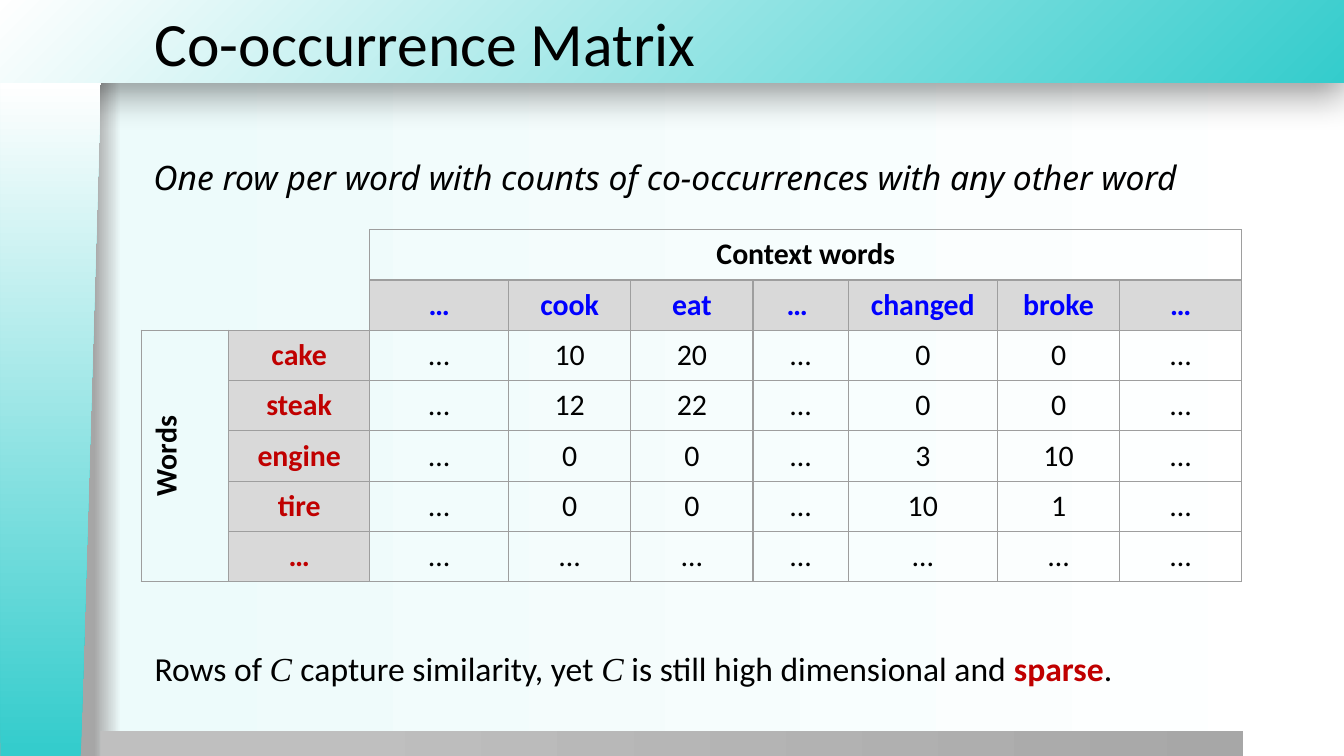
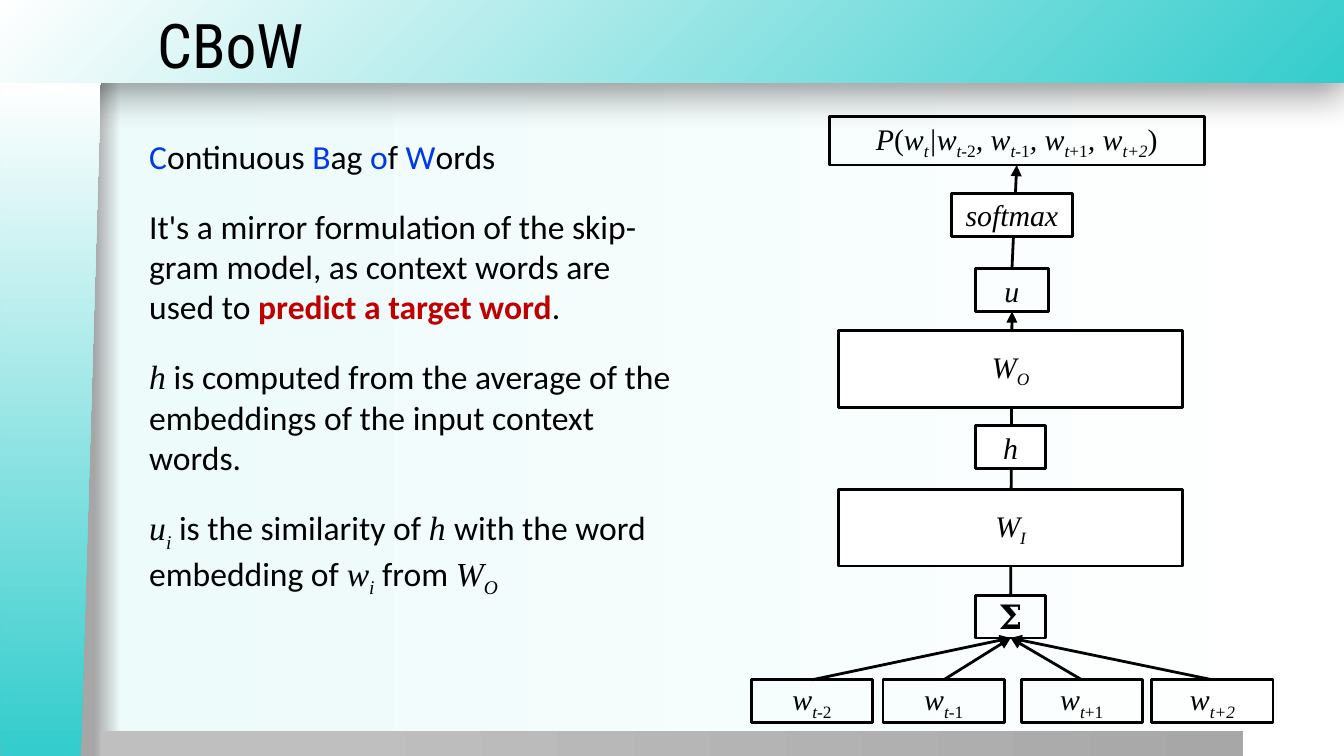
from dataclasses import dataclass, replace

from lxml import etree
from pptx import Presentation
from pptx import util as u
from pptx.dml import color
from pptx.enum import shapes, text
from pptx.oxml import ns


@dataclass(frozen=True)
class Style:
    face: str = "Calibri"
    size: int = 18
    tint: str = "000000"
    bold: bool = False
    italic: bool = False
    baseline: int = 0


PLAIN = Style()
MATH = Style("Times New Roman", italic=True)
LABEL = replace(MATH, size=16)
CELL = Style(size=16)
HEAD = replace(CELL, bold=True)


@dataclass(frozen=True)
class Theme:
    teal: str = "34CCCC"
    mist: str = "EDFBFB"
    white: str = "FFFFFF"
    black: str = "000000"
    edge_grey: str = "A6A6A6"
    foot_light: str = "BFBFBF"
    foot_dark: str = "A7A7A7"
    header_fill: str = "D9D9D9"
    grid: str = "9E9E9E"
    title: Style = Style(size=33)
    title_condensed: Style = Style("Roboto Condensed", 33)
    lead: Style = Style("Noto Sans", italic=True)
    plain: Style = PLAIN
    key: Style = replace(PLAIN, tint="C00000", bold=True)
    initial: Style = replace(PLAIN, tint="0039E5")
    math: Style = MATH
    math_sub: Style = replace(MATH, baseline=-25000)
    label: Style = LABEL
    label_upright: Style = replace(LABEL, italic=False)
    label_sub: Style = replace(LABEL, baseline=-25000)
    label_sub_upright: Style = replace(LABEL, italic=False, baseline=-25000)
    sigma: Style = replace(MATH, italic=False)
    cell: Style = CELL
    head: Style = HEAD
    context_head: Style = replace(HEAD, tint="0000FF")
    word_head: Style = replace(HEAD, tint="C00000")


THEME = Theme()


def rgb(code):
    return color.RGBColor.from_string(code)


def child(parent, tag, **attributes):
    """Append a DrawingML element to parent."""
    node = etree.SubElement(parent, ns.qn("a:" + tag))
    for name, value in attributes.items():
        node.set(name, str(value))
    return node


def set_gradient(fill, owner, stops, corner=False):
    """Fill with (percent, colour) stops, left to right or out of the lower right corner."""
    fill.gradient()
    node = owner.find(".//" + ns.qn("a:gradFill"))
    for old in list(node):
        node.remove(old)
    node.set("rotWithShape", "1")
    stop_list = child(node, "gsLst")
    for percent, code in stops:
        child(child(stop_list, "gs", pos=percent * 1000), "srgbClr", val=code)
    if corner:
        child(child(node, "path", path="circle"), "fillToRect", l=100000, t=100000)
    else:
        child(node, "lin", ang=0, scaled=0)


def set_font(font, style):
    font.name, font.size = style.face, u.Pt(style.size)
    font.bold, font.italic = style.bold, style.italic
    font.color.rgb = rgb(style.tint)


def write(para, spans):
    """Add (text, style) spans to a paragraph."""
    if len({style for _, style in spans}) == 1:
        set_font(para.font, spans[0][1])
    for words, style in spans:
        span = para.add_run()
        span.text = words
        set_font(span.font, style)
        if style.baseline:
            span._r.get_or_add_rPr().set("baseline", str(style.baseline))


def set_frame(frame, inset, anchor):
    frame.word_wrap = True
    frame.auto_size = text.MSO_AUTO_SIZE.NONE
    frame.vertical_anchor = anchor
    frame.margin_left = frame.margin_right = u.Cm(inset)
    frame.margin_top = frame.margin_bottom = u.Cm(inset)


def place(shape, area):
    shape.left, shape.top, shape.width, shape.height = map(u.Cm, area)


class SlideBuilder:
    def __init__(self, theme):
        self.theme = theme
        self.deck = Presentation()
        self.deck.slide_width, self.deck.slide_height = u.Cm(25.4), u.Cm(14.29)
        self.layout = self.deck.slide_layouts[1]
        self.page = None
        for holder in list(self.layout.placeholders):
            if holder.placeholder_format.idx > 1:
                holder.element.getparent().remove(holder.element)
        place(self.layout.placeholders[0], (2.67, 0, 22.73, 1.6))
        place(self.layout.placeholders[1], (2.67, 2.3, 21.87, 10.4))
        set_gradient(self.layout.background.fill, self.layout.element,
                     [(7, theme.edge_grey), (9, theme.mist), (100, theme.white)])

    def new_page(self):
        self.page = self.deck.slides.add_slide(self.layout)
        if len(self.deck.slides) == 1:
            self.dress_layout()

    def dress_layout(self):
        """Draw the three bands and hand them to the layout, behind its placeholders."""
        theme = self.theme
        kinds = shapes.MSO_SHAPE
        top = self.band(kinds.RECTANGLE, (-0.03, 0, 25.43, 1.57),
                        [(0, theme.teal), (100, theme.white)], corner=True)
        shadow = child(top.element.spPr.find(ns.qn("a:effectLst")), "outerShdw",
                       blurRad=u.Pt(20), dist=u.Pt(6), dir=5400000,
                       algn="t", rotWithShape=0)
        child(child(shadow, "srgbClr", val=theme.black), "alpha", val=40000)
        foot = self.band(kinds.RECTANGLE, (1.9, 13.82, 21.59, 0.5),
                         [(20, theme.foot_light), (100, theme.foot_dark)])
        side = self.band(kinds.FLOWCHART_MANUAL_INPUT, (-5.41, 6.98, 12.73, 1.9),
                         [(1, theme.teal), (100, theme.white)])
        side.rotation = 270
        side.element.spPr.find(ns.qn("a:xfrm")).set("flipV", "1")
        for order, shape in enumerate((top, foot, side)):
            self.layout.shapes.element.insert(2 + order, shape.element)

    def band(self, kind, area, stops, corner=False):
        shape = self.page.shapes.add_shape(kind, *map(u.Cm, area))
        shape.shadow.inherit = False
        shape.line.fill.background()
        set_gradient(shape.fill, shape.element, stops, corner)
        return shape

    def title(self, words, area, style):
        holder = self.page.shapes.title
        place(holder, area)
        set_frame(holder.text_frame, 0.25, text.MSO_ANCHOR.MIDDLE)
        para = holder.text_frame.paragraphs[0]
        para.alignment = text.PP_ALIGN.LEFT
        write(para, [(words, style)])

    def body(self, paragraphs, area, gap=0):
        holder = self.page.placeholders[1]
        place(holder, area)
        frame = holder.text_frame
        set_frame(frame, 0.25, text.MSO_ANCHOR.TOP)
        for number, spans in enumerate(paragraphs):
            para = frame.add_paragraph() if number else frame.paragraphs[0]
            properties = para._p.get_or_add_pPr()
            properties.set("marL", "0")
            properties.set("indent", "0")
            child(properties, "buNone")
            para.space_before = u.Pt(gap if number else 0)
            write(para, spans)

    def text_box(self, words, area, style):
        box = self.page.shapes.add_textbox(*map(u.Cm, area))
        set_frame(box.text_frame, 0.18, text.MSO_ANCHOR.TOP)
        para = box.text_frame.paragraphs[0]
        para.line_spacing = 1.15
        write(para, [(words, style)])

    def node(self, spans, area, filled=False):
        box = self.page.shapes.add_shape(shapes.MSO_SHAPE.RECTANGLE, *map(u.Cm, area))
        box.shadow.inherit = False
        if filled:
            box.fill.solid()
            box.fill.fore_color.rgb = rgb(self.theme.white)
        else:
            box.fill.background()
        box.line.color.rgb = rgb(self.theme.black)
        box.line.width = u.Pt(1.5)
        set_frame(box.text_frame, 0.25, text.MSO_ANCHOR.MIDDLE)
        para = box.text_frame.paragraphs[0]
        para.alignment = text.PP_ALIGN.CENTER
        write(para, spans)
        return box

    def arrow(self, lower, upper):
        """Point from the top of the lower box to the bottom of the upper one."""
        line = self.page.shapes.add_connector(shapes.MSO_CONNECTOR.STRAIGHT, 0, 0, 0, 0)
        line.begin_connect(lower, 0)
        line.end_connect(upper, 2)
        line.line.color.rgb = rgb(self.theme.black)
        line.line.width = u.Pt(1.5)
        properties = line.element.spPr
        child(properties.find(ns.qn("a:ln")), "tailEnd", type="triangle")
        child(properties, "effectLst")

    def matrix(self, rows, widths, row_height, corner):
        """Draw the word-by-context table; the top left 2 x 2 block stays open."""
        frame = self.page.shapes.add_table(
            len(rows), len(widths), *map(u.Cm, corner),
            u.Cm(sum(widths)), u.Cm(row_height * len(rows)))
        table = frame.table
        table.first_row = table.horz_banding = False
        for column, width in zip(table.columns, widths):
            column.width = u.Cm(width)
        for r, row in enumerate(rows):
            table.rows[r].height = u.Cm(row_height)
            for c, words in enumerate(row):
                self.matrix_cell(table.cell(r, c), r, c, words)
        table.cell(0, 2).merge(table.cell(0, len(widths) - 1))
        table.cell(2, 0).merge(table.cell(len(rows) - 1, 0))
        table.cell(2, 0)._tc.get_or_add_tcPr().set("vert", "vert270")

    def matrix_cell(self, cell, r, c, words):
        theme = self.theme
        is_open = r < 2 and c < 2
        is_header = (r == 1 and c > 1) or (c == 1 and r > 1)
        if r == 0 or c == 0:
            style = theme.head
        elif r == 1:
            style = theme.context_head
        else:
            style = theme.word_head if c == 1 else theme.cell
        cell.vertical_anchor = text.MSO_ANCHOR.MIDDLE
        cell.margin_left = cell.margin_right = u.Cm(0.2)
        cell.margin_top = cell.margin_bottom = u.Cm(0.13)
        properties = cell._tc.get_or_add_tcPr()
        for side in "LRTB":
            line = child(properties, "ln" + side, w=u.Pt(0.75))
            if is_open and (side, r, c) not in {("R", 0, 1), ("R", 1, 1), ("B", 1, 0), ("B", 1, 1)}:
                child(line, "noFill")
            else:
                child(child(line, "solidFill"), "srgbClr", val=theme.grid)
        if is_header:
            cell.fill.solid()
            cell.fill.fore_color.rgb = rgb(theme.header_fill)
        else:
            cell.fill.background()
        para = cell.text_frame.paragraphs[0]
        para.alignment = text.PP_ALIGN.CENTER
        if words:
            write(para, [(words, style)])
        else:
            child(para._p, "endParaRPr", sz=style.size * 100)


def build_matrix_page(builder):
    t = builder.theme
    builder.new_page()
    builder.title("Co-occurrence Matrix", (2.67, 0, 22.73, 1.6), t.title)
    builder.body([[("Rows of ", t.plain), ("C ", t.math),
                   ("capture similarity, yet ", t.plain), ("C", t.math),
                   (" is still high dimensional and ", t.plain),
                   ("sparse", t.key), (".", t.plain)]], (2.67, 11.99, 21.87, 1.09))
    rows = [
        ["", "", "Context words", "", "", "", "", "", ""],
        ["", "", "…", "cook", "eat", "… ", "changed", "broke", "…"],
        ["Words", "cake", "…", "10", "20", "…", "0", "0", "…"],
        ["", "steak", "…", "12", "22", "…", "0", "0", "…"],
        ["", "engine", "…", "0", "0", "…", "3", "10", "…"],
        ["", "tire", "…", "0", "0", "…", "10", "1", "…"],
        [""] + ["…"] * 8,
    ]
    widths = [1.65, 2.67, 2.62, 2.31, 2.31, 1.8, 2.82, 2.31, 2.31]
    builder.matrix(rows, widths, 0.93, (2.67, 4.34))
    builder.text_box("One row per word with counts of co-occurrences with any other word",
                     (2.72, 2.67, 19.96, 1.09), t.lead)


def build_cbow_page(builder):
    t = builder.theme
    builder.new_page()
    builder.title("CBoW", (2.72, 0, 22.66, 1.65), t.title_condensed)
    builder.body([
        [("C", t.initial), ("ontinuous ", t.plain), ("B", t.initial), ("ag ", t.plain),
         ("o", t.initial), ("f ", t.plain), ("W", t.initial), ("ords", t.plain)],
        [("It's a mirror formulation of the skip-gram model, "
          "as context words are used to ", t.plain),
         ("predict a target word", t.key), (".", t.plain)],
        [("h", t.math), (" is computed from the average of the embeddings "
                         "of the input context words.", t.plain)],
        [("u", t.math), ("i", t.math_sub), (" is the similarity of ", t.plain),
         ("h ", t.math), ("with the word embedding of ", t.plain),
         ("w", t.math), ("i", t.math_sub), (" from ", t.plain),
         ("W", t.math), ("O", t.math_sub)],
    ], (2.57, 2.31, 10.49, 10.41), gap=16)

    def word(offset, lead=""):
        """Spans of w with its subscript; the last offset is italic throughout."""
        spans = [(lead + "w", t.label)]
        if offset == "+2":
            return spans + [("t+2", t.label_sub)]
        return spans + [("t", t.label_sub)] + ([(offset, t.label_sub_upright)] if offset else [])

    offsets = ["-2", "-1", "+1", "+2"]
    inputs = [builder.node(word(offset), (left, 12.85, 2.29, 0.81))
              for offset, left in zip(offsets, [14.2, 16.69, 19.3, 21.77])]
    target = [("P", t.label), ("(", t.label_upright)] + word("") + word("-2", "|")
    for offset in offsets[1:]:
        target += word(offset, ", ")
    probability = builder.node(target + [(")", t.label_upright)], (15.67, 2.21, 7.09, 0.91))
    total = builder.node([("𝚺", t.sigma)], (18.44, 11.25, 1.32, 0.81))
    scores = builder.node([("u", t.label)], (18.44, 5.08, 1.37, 0.81))
    for box in inputs:
        builder.arrow(box, total)
    builder.arrow(total, scores)
    builder.arrow(scores, probability)
    for index, top in (("I", 9.25), ("O", 6.25)):
        builder.node([("W", t.label), (index, t.label_sub)], (15.85, top, 6.5, 1.45), True)
    builder.node([("softmax", t.label)], (17.98, 3.66, 2.29, 0.81), True)
    builder.node([("h", t.label)], (18.44, 8.05, 1.32, 0.81), True)


def main():
    builder = SlideBuilder(THEME)
    build_matrix_page(builder)
    build_cbow_page(builder)
    builder.deck.save("out.pptx")


if __name__ == "__main__":
    main()
